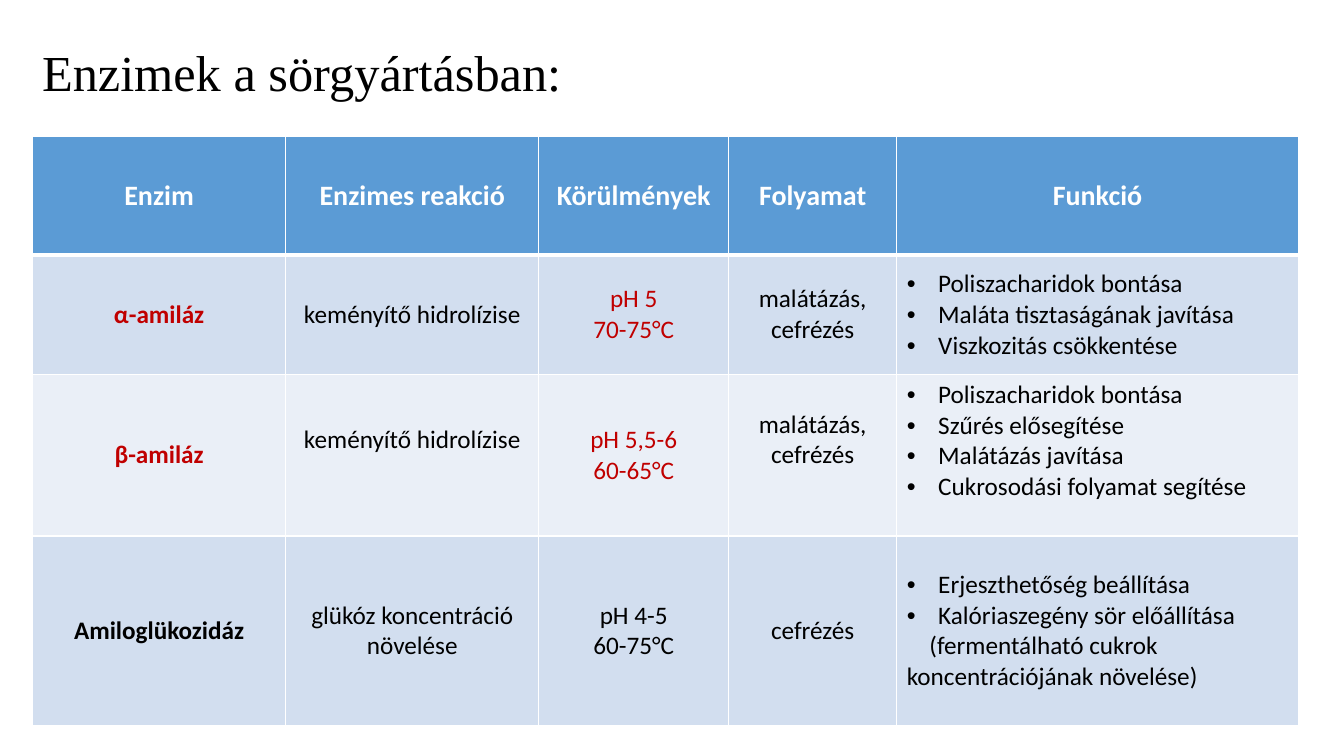
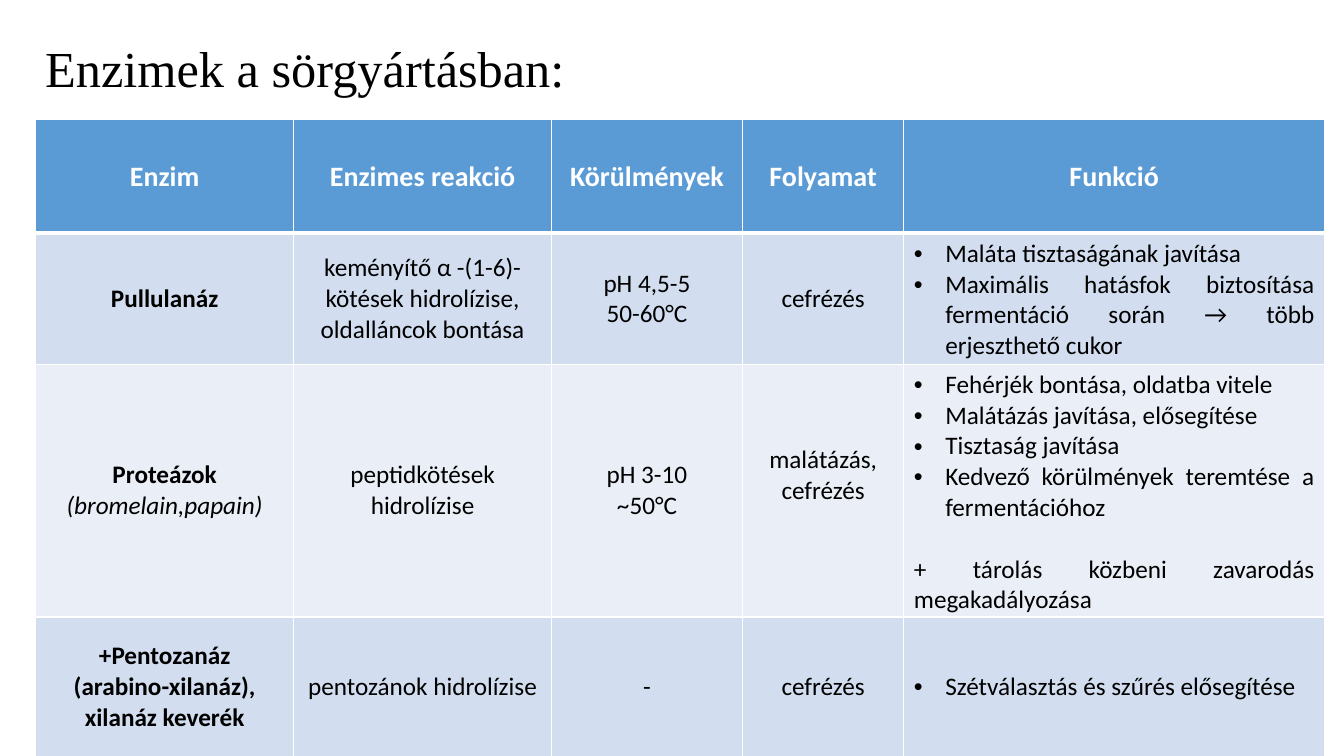
from dataclasses import dataclass

from lxml import etree
from pptx import Presentation
from pptx.dml.color import RGBColor
from pptx.enum.text import MSO_ANCHOR, PP_ALIGN
from pptx.oxml.ns import qn
from pptx.util import Cm, Pt

CENTER, JUSTIFY, LEFT = PP_ALIGN.CENTER, PP_ALIGN.JUSTIFY, PP_ALIGN.LEFT
MIDDLE = MSO_ANCHOR.MIDDLE


@dataclass(frozen=True)
class Theme:
    title_font: str = "Times New Roman"
    body_font: str = "Calibri"
    title_size: int = 36
    header_size: int = 20
    body_size: int = 18
    text: str = "000000"
    accent: str = "C00000"
    header_text: str = "FFFFFF"
    header_fill: str = "5B9BD5"
    band_fills: tuple = ("D2DEEF", "EAEFF7")
    border: str = "FFFFFF"
    thin: int = 1
    thick: int = 3


@dataclass
class Enzyme:
    height: float
    name: str
    reaction: str
    conditions: str
    process: str
    functions: list
    note: str = ""
    closing: str = ""
    closing_indent: float = 0
    closing_gap: int = 0
    highlighted: bool = False
    raised_columns: tuple = ()


THEME = Theme()
TITLE = "Enzimek a sörgyártásban:"
HEADERS = ["Enzim", "Enzimes reakció", "Körülmények", "Folyamat", "Funkció"]
BULLET_INDENT = Cm(0.79)
RAISED_MARGIN = Cm(0.9)

# Slide content, lengths in centimetres
SLIDES = [
    {
        "title_box": (0.81, 0.91, 14.02, 1.8),
        "table_corner": (0.82, 3.43),
        "columns": (6.38, 6.38, 4.78, 4.24, 10.12),
        "header_height": 3,
        "enzymes": [
            Enzyme(3, "α-amiláz", "keményítő hidrolízise", "pH 5\n70-75°C",
                   "malátázás, cefrézés",
                   ["Poliszacharidok bontása", "Maláta tisztaságának javítása",
                    "Viszkozitás csökkentése"],
                   highlighted=True),
            Enzyme(4.06, "β-amiláz", "keményítő hidrolízise", "pH 5,5-6\n60-65°C",
                   "malátázás, cefrézés",
                   ["Poliszacharidok bontása", "Szűrés elősegítése",
                    "Malátázás javítása", "Cukrosodási folyamat segítése"],
                   highlighted=True, raised_columns=(1, 3, 4)),
            Enzyme(4.78, "Amiloglükozidáz", "glükóz koncentráció növelése",
                   "pH 4-5\n60-75°C", "cefrézés",
                   ["Erjeszthetőség beállítása", "Kalóriaszegény sör előállítása"],
                   closing="(fermentálható cukrok koncentrációjának növelése)",
                   closing_indent=0.57),
        ],
    },
    {
        "title_box": (0.89, 0.81, 17.98, 1.8),
        "table_corner": (0.9, 3.02),
        "columns": (6.5, 6.5, 4.81, 4.07, 10.6),
        "header_height": 2.86,
        "enzymes": [
            Enzyme(3.3, "Pullulanáz",
                   "keményítő α -(1-6)- kötések hidrolízise, oldalláncok bontása",
                   "pH 4,5-5\n50-60°C", "cefrézés",
                   ["Maláta tisztaságának javítása",
                    "Maximális hatásfok biztosítása fermentáció során → több "
                    "erjeszthető cukor"]),
            Enzyme(6.35, "Proteázok", "peptidkötések hidrolízise", "pH 3-10\n~50°C",
                   "malátázás, cefrézés",
                   ["Fehérjék bontása, oldatba vitele",
                    "Malátázás javítása, elősegítése", "Tisztaság javítása",
                    "Kedvező körülmények teremtése a fermentációhoz"],
                   note="(bromelain,papain)",
                   closing="+ tárolás közbeni zavarodás megakadályozása",
                   closing_gap=22, raised_columns=(3,)),
            Enzyme(3.52, "+Pentozanáz\n(arabino-xilanáz), xilanáz keverék",
                   "pentozánok hidrolízise", "-", "cefrézés",
                   ["Szétválasztás és szűrés elősegítése"]),
        ],
    },
]


def format_text(paragraph, alignment, size, color, font=THEME.body_font,
                bold=False, italic=False):
    paragraph.alignment = alignment
    for run in paragraph.runs:
        run.font.name = font
        run.font.size = Pt(size)
        run.font.bold = bold
        run.font.italic = italic
        run.font.color.rgb = RGBColor.from_string(color)


def style_cell(cell, fill, top, bottom):
    cell.vertical_anchor = MIDDLE
    properties = cell._tc.get_or_add_tcPr()
    widths = {"lnL": THEME.thin, "lnR": THEME.thin, "lnT": top, "lnB": bottom}
    for side, width in widths.items():
        line = etree.SubElement(properties, qn(f"a:{side}"), w=str(Pt(width)))
        solid = etree.SubElement(line, qn("a:solidFill"))
        etree.SubElement(solid, qn("a:srgbClr"), val=THEME.border)
    cell.fill.solid()
    cell.fill.fore_color.rgb = RGBColor.from_string(fill)


presentation = Presentation()
presentation.slide_width = Cm(33.87)
presentation.slide_height = Cm(19.05)

for content in SLIDES:
    slide = presentation.slides.add_slide(presentation.slide_layouts[6])

    # Title
    title = slide.shapes.add_textbox(*map(Cm, content["title_box"]))
    title.text_frame.word_wrap = True
    title.text_frame.text = TITLE
    format_text(title.text_frame.paragraphs[0], LEFT, THEME.title_size,
                THEME.text, THEME.title_font)

    # Table grid
    enzymes = content["enzymes"]
    columns = content["columns"]
    heights = [content["header_height"]] + [enzyme.height for enzyme in enzymes]
    left, top = content["table_corner"]
    table = slide.shapes.add_table(
        len(heights), len(columns), Cm(left), Cm(top),
        Cm(sum(columns)), Cm(sum(heights))).table
    for column, width in zip(table.columns, columns):
        column.width = Cm(width)
    for row, height in zip(table.rows, heights):
        row.height = Cm(height)

    # Header row
    for cell, header in zip(table.rows[0].cells, HEADERS):
        style_cell(cell, THEME.header_fill, THEME.thin, THEME.thick)
        cell.text_frame.text = header
        format_text(cell.text_frame.paragraphs[0], CENTER, THEME.header_size,
                    THEME.header_text, bold=True)

    # Enzyme rows
    for row_index, enzyme in enumerate(enzymes, start=1):
        cells = list(table.rows[row_index].cells)
        fill = THEME.band_fills[(row_index - 1) % 2]
        line_above = THEME.thick if row_index == 1 else THEME.thin
        texts = [enzyme.name, enzyme.reaction, enzyme.conditions, enzyme.process,
                 "\n".join(enzyme.functions)]
        for column_index, (cell, text) in enumerate(zip(cells, texts)):
            style_cell(cell, fill, line_above, THEME.thin)
            if column_index in enzyme.raised_columns:
                cell.margin_bottom = RAISED_MARGIN
            cell.text_frame.text = text
            is_function = column_index == len(HEADERS) - 1
            is_accent = enzyme.highlighted and column_index in (0, 2)
            for paragraph in cell.text_frame.paragraphs:
                if is_function:
                    properties = paragraph._p.get_or_add_pPr()
                    properties.set("marL", str(BULLET_INDENT))
                    properties.set("indent", str(-BULLET_INDENT))
                    etree.SubElement(properties, qn("a:buFont"), typeface="Arial")
                    etree.SubElement(properties, qn("a:buChar"), char="•")
                format_text(paragraph, JUSTIFY if is_function else CENTER,
                            THEME.body_size,
                            THEME.accent if is_accent else THEME.text,
                            bold=column_index == 0)

        # Unbulleted additions
        if enzyme.note:
            paragraph = cells[0].text_frame.add_paragraph()
            paragraph.text = enzyme.note
            format_text(paragraph, CENTER, THEME.body_size, THEME.text, italic=True)
        if enzyme.closing:
            paragraph = cells[-1].text_frame.add_paragraph()
            paragraph.text = enzyme.closing
            paragraph.space_before = Pt(enzyme.closing_gap)
            paragraph._p.get_or_add_pPr().set("indent", str(Cm(enzyme.closing_indent)))
            format_text(paragraph, LEFT if enzyme.closing_indent else JUSTIFY,
                        THEME.body_size, THEME.text)

presentation.save("out.pptx")
